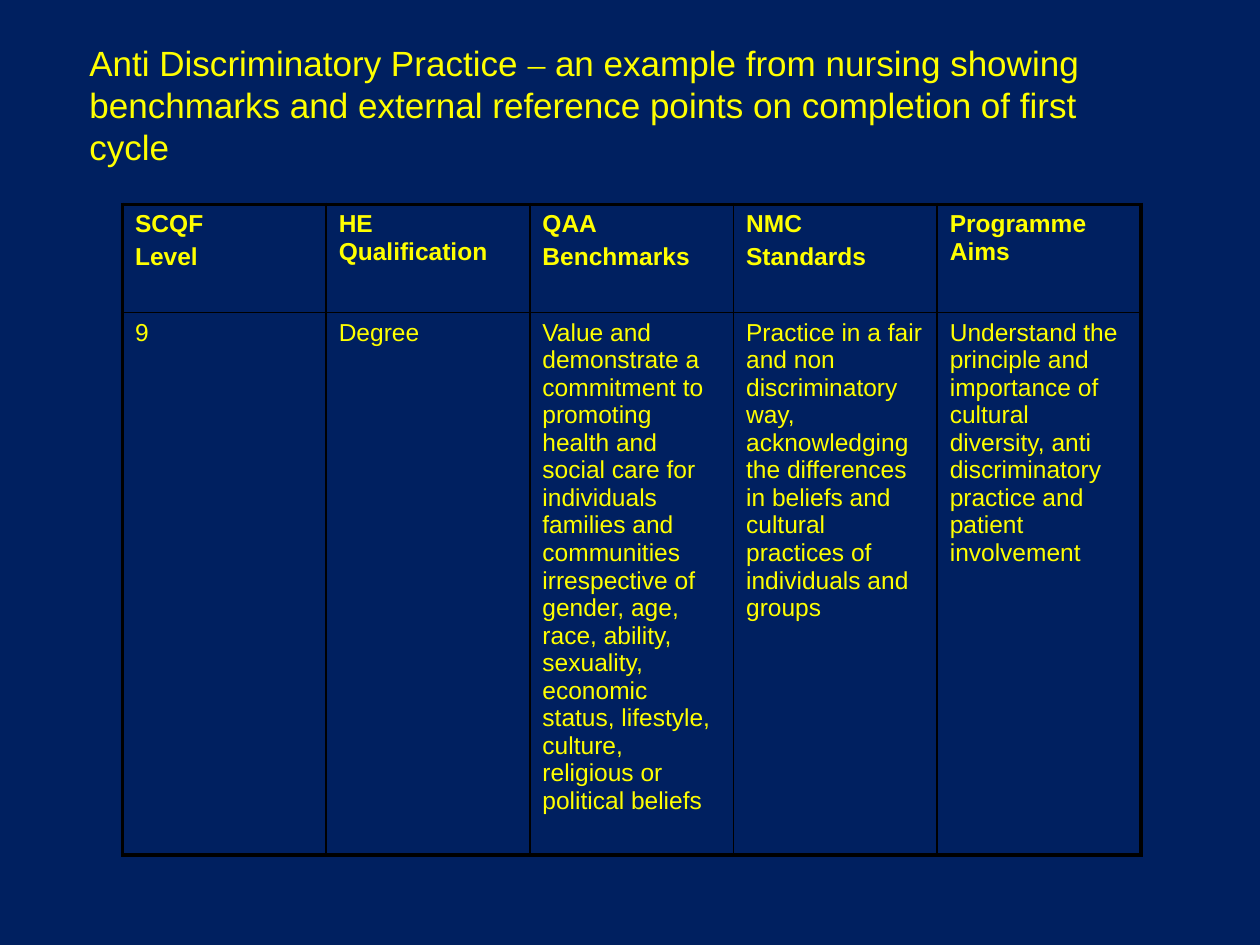
from dataclasses import dataclass

from lxml import etree
from pptx import Presentation
from pptx.dml.color import RGBColor
from pptx.enum.text import MSO_ANCHOR
from pptx.oxml.ns import qn
from pptx.util import Pt

MIDDLE = MSO_ANCHOR.MIDDLE


@dataclass(frozen=True)
class Theme:
    background: RGBColor = RGBColor(0x00, 0x20, 0x60)
    text: RGBColor = RGBColor(0xFF, 0xFF, 0x00)
    border: str = "000000"
    font: str = "Arial"
    dash_font: str = "Times New Roman"
    title_size: float = 20
    table_size: float = 14
    outer_line: float = 2.25
    inner_line: float = 1


@dataclass(frozen=True)
class Column:
    heading: tuple[str, ...]
    entry: str


THEME = Theme()
COL_WIDTH = 116.4
HEADER_HEIGHT, BODY_HEIGHT = 61.9, 296.6
TITLE_PARTS = (
    ("Anti Discriminatory Practice ", THEME.font),
    ("–", THEME.dash_font),
    (" an example from nursing showing benchmarks and external reference "
     "points on completion of first cycle", THEME.font),
)
COLUMNS = (
    Column(("SCQF", "Level"), "9"),
    Column(("HE Qualification",), "Degree"),
    Column(("QAA", "Benchmarks"),
           "Value and demonstrate a commitment to promoting health and social "
           "care for individuals families and communities irrespective of "
           "gender, age, race, ability, sexuality, economic status, lifestyle, "
           "culture, religious or political beliefs"),
    Column(("NMC", "Standards"),
           "Practice in a fair and non discriminatory way, acknowledging the "
           "differences in beliefs and cultural practices of individuals and "
           "groups"),
    Column(("Programme Aims",),
           "Understand the principle and importance of cultural diversity, "
           "anti discriminatory practice and patient involvement"),
)


def style_font(font, size: float, name: str = THEME.font, bold: bool = False) -> None:
    font.name = name
    font.size = Pt(size)
    font.bold = bold
    font.color.rgb = THEME.text


def add_title(slide) -> None:
    sp = slide.shapes.add_textbox(Pt(44), Pt(35.3), Pt(582), Pt(49))
    tf = sp.text_frame
    tf.word_wrap = True
    tf.vertical_anchor = MIDDLE
    for text, font_name in TITLE_PARTS:
        r = tf.paragraphs[0].add_run()
        r.text = text
        style_font(r.font, THEME.title_size, font_name)


def set_borders(cell, outer_sides: dict[str, bool]) -> None:
    """Draw all four sides of a cell, heavier where it meets the table's edge."""
    tc_pr = cell._tc.get_or_add_tcPr()
    for side, is_outer in outer_sides.items():
        width = THEME.outer_line if is_outer else THEME.inner_line
        ln = etree.SubElement(tc_pr, qn(f"a:ln{side}"), w=str(Pt(width)))
        fill = etree.SubElement(ln, qn("a:solidFill"))
        etree.SubElement(fill, qn("a:srgbClr"), val=THEME.border)


def fill_cell(cell, lines: tuple[str, ...], bold: bool) -> None:
    tf = cell.text_frame
    tf.text = "\n".join(lines)
    for i, p in enumerate(tf.paragraphs):
        if i:
            p.space_before = Pt(0.2 * THEME.table_size)
        for r in p.runs:
            style_font(r.font, THEME.table_size, bold=bold)


def add_benchmark_table(slide) -> None:
    count = len(COLUMNS)
    table = slide.shapes.add_table(
        2, count, Pt(70), Pt(116.8),
        Pt(COL_WIDTH * count), Pt(HEADER_HEIGHT + BODY_HEIGHT)).table
    table.first_row = table.horz_banding = False
    for row, height in zip(table.rows, (HEADER_HEIGHT, BODY_HEIGHT)):
        row.height = Pt(height)
    for c, column in enumerate(COLUMNS):
        table.columns[c].width = Pt(COL_WIDTH)
        for r, lines in enumerate((column.heading, (column.entry,))):
            cell = table.cell(r, c)
            fill_cell(cell, lines, bold=r == 0)
            set_borders(cell, {"L": c == 0, "R": c == count - 1,
                               "T": r == 0, "B": r == 1})
            cell.fill.background()


def main() -> None:
    prs = Presentation()
    prs.slide_width, prs.slide_height = Pt(720), Pt(540)
    slide = prs.slides.add_slide(prs.slide_layouts[6])
    slide.background.fill.solid()
    slide.background.fill.fore_color.rgb = THEME.background
    add_title(slide)
    add_benchmark_table(slide)
    prs.save("out.pptx")


if __name__ == "__main__":
    main()
